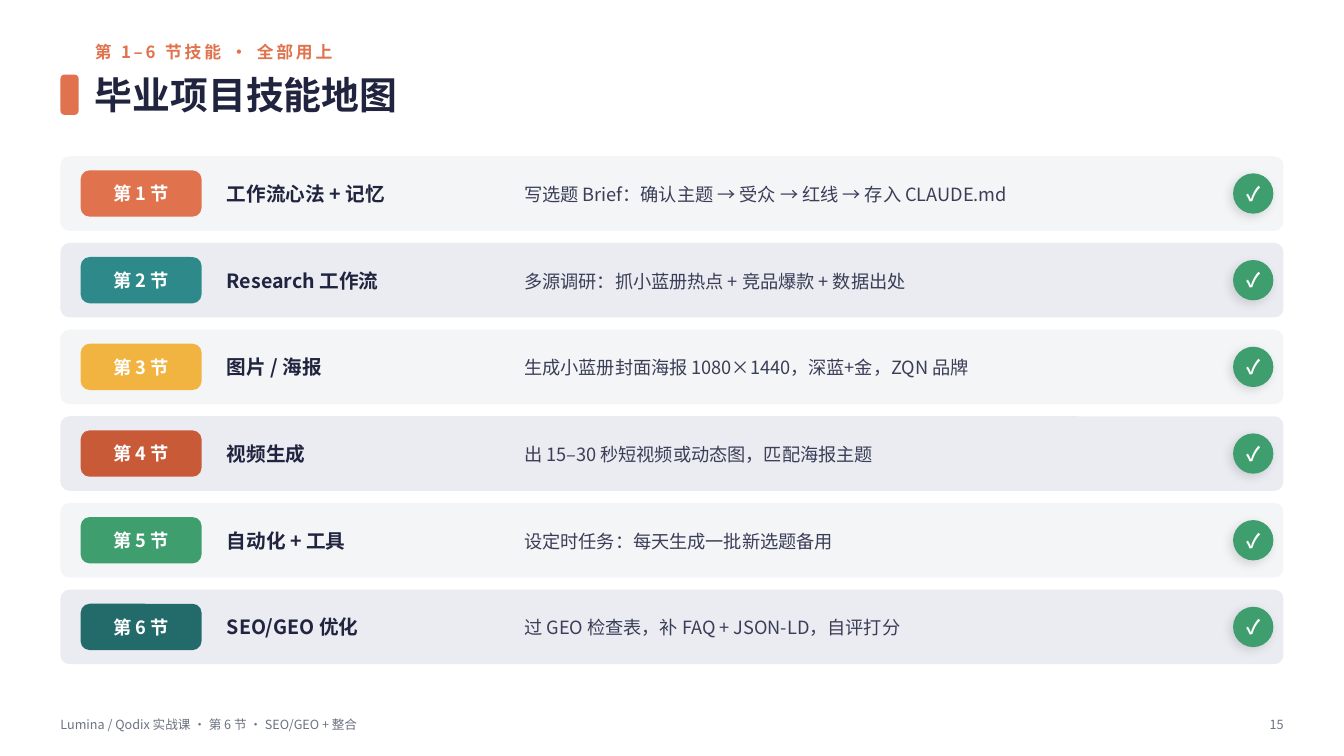
from dataclasses import dataclass

from lxml import etree
from pptx import Presentation
from pptx import util as u
from pptx.dml.color import RGBColor
from pptx.enum import shapes, text
from pptx.oxml.ns import qn
from pptx.shapes.autoshape import Shape
from pptx.slide import Slide

EMU_PER_PX = 9144  # 100 px to the inch
FONT = "Noto Sans CJK SC"
ORANGE, GREEN, NAVY = "E0734D", "3E9E6E", "20243F"
WHITE, SLATE, GRAY = "FFFFFF", "3A3E57", "6B7280"
ROW_FILLS = ("F4F5F7", "EAECF1")
ROW_LEFT, ROW_TOP, ROW_WIDTH, ROW_HEIGHT, ROW_STEP = 60, 155, 1213, 74, 86
PILL_HEIGHT, CHECK_SIZE, DETAIL_HEIGHT = 46, 40, 62
LEFT, CENTER, RIGHT = text.PP_ALIGN.LEFT, text.PP_ALIGN.CENTER, text.PP_ALIGN.RIGHT


@dataclass(frozen=True)
class Box:
    left: int
    top: int
    width: int
    height: int

    def emu(self) -> list[u.Emu]:
        return [px(n) for n in (self.left, self.top, self.width, self.height)]


@dataclass(frozen=True)
class Style:
    size: int
    color: str
    bold: bool = False
    align: text.PP_ALIGN = LEFT
    line_spacing: float | None = None
    tracking: int = 0


@dataclass(frozen=True)
class Lesson:
    color: str
    skill: str
    task: str


KICKER = Style(12, ORANGE, bold=True, tracking=2)
TITLE = Style(27, NAVY, bold=True)
PILL = Style(13, WHITE, bold=True, align=CENTER)
SKILL = Style(14, NAVY, bold=True)
TASK = Style(13, SLATE, line_spacing=1.05)
CHECK = Style(14, WHITE, bold=True, align=CENTER)
FOOTER = Style(9, GRAY)
PAGE_NUMBER = Style(9, GRAY, align=RIGHT)

LESSONS = (
    Lesson(ORANGE, "工作流心法 + 记忆", "写选题 Brief：确认主题 → 受众 → 红线 → 存入 CLAUDE.md"),
    Lesson("2E8A8A", "Research 工作流", "多源调研：抓小蓝册热点 + 竞品爆款 + 数据出处"),
    Lesson("F2B441", "图片 / 海报", "生成小蓝册封面海报 1080×1440，深蓝+金，ZQN 品牌"),
    Lesson("C85A38", "视频生成", "出 15–30 秒短视频或动态图，匹配海报主题"),
    Lesson(GREEN, "自动化 + 工具", "设定时任务：每天生成一批新选题备用"),
    Lesson("236B6B", "SEO/GEO 优化", "过 GEO 检查表，补 FAQ + JSON-LD，自评打分"),
)


def px(length: int) -> u.Emu:
    return u.Emu(length * EMU_PER_PX)


def rgb(color: str) -> RGBColor:
    return RGBColor.from_string(color)


def write(shape: Shape, words: str, style: Style) -> None:
    frame = shape.text_frame
    frame_format = {
        "word_wrap": True,
        "vertical_anchor": text.MSO_ANCHOR.MIDDLE,
        "margin_left": 0,
        "margin_top": 0,
        "margin_right": 0,
        "margin_bottom": 0,
    }
    for name, value in frame_format.items():
        setattr(frame, name, value)
    paragraph = frame.paragraphs[0]
    paragraph.alignment = style.align
    paragraph.line_spacing = style.line_spacing
    run = paragraph.add_run()
    run.text = words
    run.font.color.rgb = rgb(style.color)
    font_format = {"name": FONT, "size": u.Pt(style.size), "bold": style.bold}
    for name, value in font_format.items():
        setattr(run.font, name, value)
    properties = run.font._element if hasattr(run.font, "_element") else run._r.get_or_add_rPr()
    etree.SubElement(properties, qn("a:ea"), typeface=FONT)
    if style.tracking:
        properties.set("spc", str(style.tracking * 100))


def add_text(slide: Slide, box: Box, words: str, style: Style) -> None:
    write(slide.shapes.add_textbox(*box.emu()), words, style)


def add_filled(slide: Slide, kind: shapes.MSO_SHAPE, box: Box, color: str) -> Shape:
    shape = slide.shapes.add_shape(kind, *box.emu())
    shape.shadow.inherit = False
    shape.fill.solid()
    shape.fill.fore_color.rgb = rgb(color)
    shape.line.fill.background()
    return shape


def add_rounded(slide: Slide, box: Box, color: str, radius: int = 9) -> Shape:
    shape = add_filled(slide, shapes.MSO_SHAPE.ROUNDED_RECTANGLE, box, color)
    shape.adjustments[0] = radius / min(box.width, box.height)
    return shape


def add_soft_shadow(shape: Shape) -> None:
    effects = shape._element.spPr.find(qn("a:effectLst"))
    shadow = etree.SubElement(
        effects, qn("a:outerShdw"), blurRad=str(u.Pt(7)), dist=str(u.Pt(3)),
        dir=str(135 * 60000), algn="bl", rotWithShape="0",
    )
    color = etree.SubElement(shadow, qn("a:srgbClr"), val="000000")
    etree.SubElement(color, qn("a:alpha"), val="12000")


def add_lesson(slide: Slide, index: int, lesson: Lesson) -> None:
    top = ROW_TOP + index * ROW_STEP

    def centered(left: int, width: int, height: int) -> Box:
        return Box(left, top + (ROW_HEIGHT - height) // 2, width, height)

    row = Box(ROW_LEFT, top, ROW_WIDTH, ROW_HEIGHT)
    add_rounded(slide, row, ROW_FILLS[index % 2])
    pill = add_rounded(slide, centered(80, 120, PILL_HEIGHT), lesson.color)
    write(pill, f"第 {index + 1} 节", PILL)
    add_text(slide, centered(225, 280, ROW_HEIGHT), lesson.skill, SKILL)
    add_text(slide, centered(520, 733, DETAIL_HEIGHT), lesson.task, TASK)
    check_box = centered(1223, CHECK_SIZE, CHECK_SIZE)
    check = add_filled(slide, shapes.MSO_SHAPE.OVAL, check_box, GREEN)
    add_soft_shadow(check)
    write(check, "✓", CHECK)


def main() -> None:
    presentation = Presentation()
    presentation.slide_width, presentation.slide_height = px(1333), px(750)
    slide = presentation.slides.add_slide(presentation.slide_layouts[6])
    slide.background.fill.solid()
    slide.background.fill.fore_color.rgb = rgb(WHITE)

    add_text(slide, Box(94, 36, 1179, 30), "第 1–6 节技能 · 全部用上", KICKER)
    add_rounded(slide, Box(60, 74, 18, 40), ORANGE, radius=4)
    add_text(slide, Box(94, 64, 1179, 60), "毕业项目技能地图", TITLE)
    for index, lesson in enumerate(LESSONS):
        add_lesson(slide, index, lesson)
    add_text(slide, Box(60, 704, 900, 30), "Lumina / Qodix 实战课 · 第 6 节 · SEO/GEO + 整合", FOOTER)
    add_text(slide, Box(1203, 704, 70, 30), "15", PAGE_NUMBER)
    presentation.save("out.pptx")


if __name__ == "__main__":
    main()
